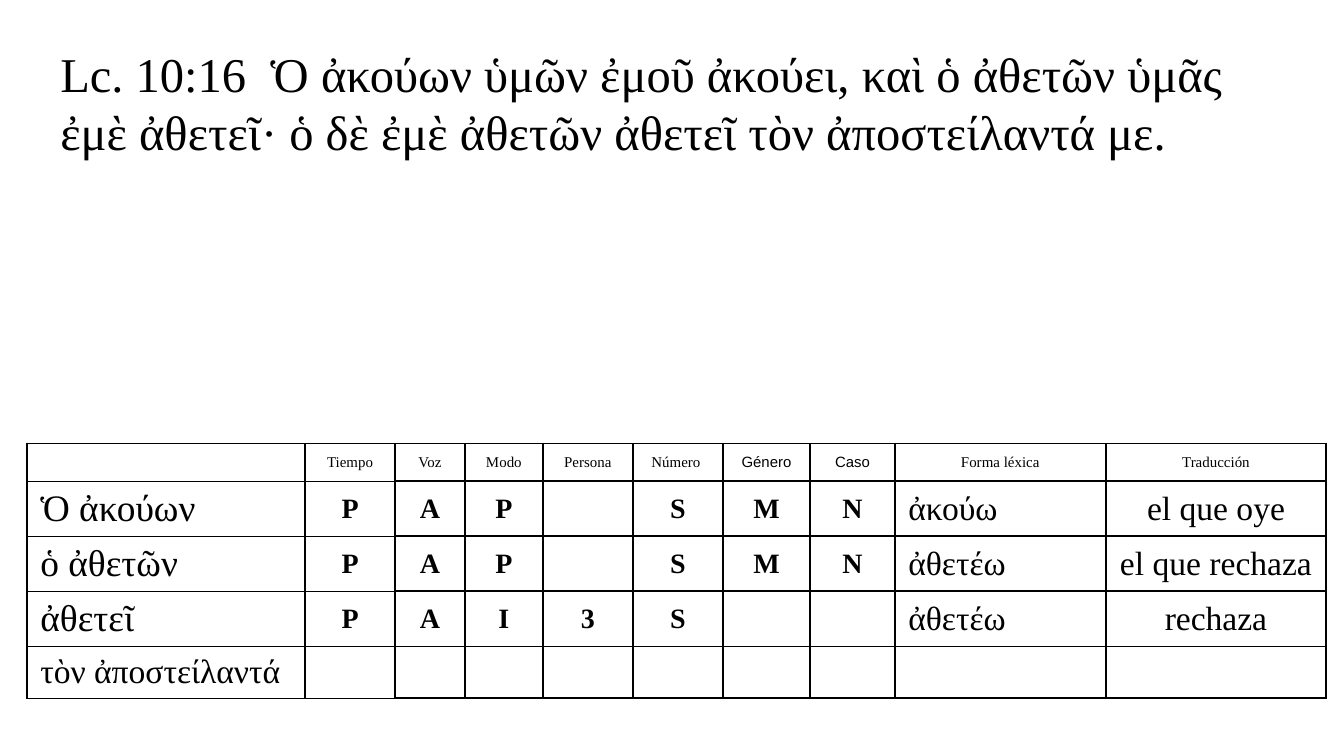
from lxml.etree import SubElement
from pptx import Presentation
from pptx.dml.color import RGBColor as RGB
from pptx.enum.text import MSO_ANCHOR as ANCHOR, MSO_AUTO_SIZE as AUTO, PP_ALIGN as ALIGN
from pptx.oxml import parse_xml
from pptx.oxml.ns import nsdecls, qn
from pptx.util import Inches, Pt

THEME = {
    "ink": "000000", "serif": "Times New Roman", "sans": "Arial",
    "verse": 26, "header": 8, "form": 20, "code": 15, "gloss": 18,
}
VERSE = ("Lc. 10:16  Ὁ ἀκούων ὑμῶν ἐμοῦ ἀκούει, καὶ ὁ ἀθετῶν ὑμᾶς "
         "ἐμὲ ἀθετεῖ· ὁ δὲ ἐμὲ ἀθετῶν ἀθετεῖ τὸν ἀποστείλαντά με.")
ROWS = [
    ["", "Tiempo", "Voz", "Modo", "Persona", "Número ", "Género", "Caso",
     "Forma léxica", "Traducción"],
    ["Ὁ ἀκούων", *"PAP", "", *"SMN", "ἀκούω", "el que oye"],
    ["ὁ ἀθετῶν", *"PAP", "", *"SMN", "ἀθετέω", "el que rechaza"],
    ["ἀθετεῖ", *"PAI3S", "", "", "ἀθετέω", "rechaza"],
    ["τὸν ἀποστείλαντά"] + [""] * 9,
]
COL_WIDTHS = [2.07, 0.67, 0.52, 0.58, 0.67, 0.67, 0.65, 0.63, 1.57, 1.64]
ROW_HEIGHTS = [0.28, 0.41, 0.41, 0.41, 0.37]
LAST_ROW = len(ROWS) - 1


def write(p, text, size, face="serif", bold=False):
    if not text:
        SubElement(p._p, qn("a:endParaRPr"), sz=str(size * 100))
        return
    r = p.add_run()
    r.text = text
    for name, value in {"size": Pt(size), "name": THEME[face], "bold": bold}.items():
        setattr(r.font, name, value)
    r.font.color.rgb = RGB.from_string(THEME["ink"])


def border(cell, widths):
    for i, (side, width) in enumerate(widths.items()):
        cell._tc.get_or_add_tcPr().insert(i, parse_xml(
            f'<a:ln{side} {nsdecls("a")} w="{Pt(width)}"><a:solidFill>'
            f'<a:srgbClr val="{THEME["ink"]}"/></a:solidFill></a:ln{side}>'))


prs = Presentation()
prs.slide_width, prs.slide_height = Inches(10), Inches(10 * 9 / 16)
s = prs.slides.add_slide(prs.slide_layouts[6])

table = s.shapes.add_table(
    len(ROWS), len(COL_WIDTHS), Inches(0.2), Inches(3.3),
    Inches(sum(COL_WIDTHS)), Inches(sum(ROW_HEIGHTS))).table
table.first_row = table.horz_banding = False
for column, width in zip(table.columns, COL_WIDTHS):
    column.width = Inches(width)
for row, height in zip(table.rows, ROW_HEIGHTS):
    row.height = Inches(height)

for i, texts in enumerate(ROWS):
    for j, text in enumerate(texts):
        cell = table.cell(i, j)
        cell.fill.background()
        cell.vertical_anchor = ANCHOR.MIDDLE
        cell.margin_top = cell.margin_bottom = Inches(0.04)
        thin = 0.75 if j < 2 else 1
        border(cell, {"L": 1, "R": 1, "T": thin if i else 1, "B": thin})

        p = cell.text_frame.paragraphs[0]
        p.alignment = ALIGN.LEFT if i and j in (0, 8) else ALIGN.CENTER
        if i == 0:
            write(p, text, THEME["header"], "sans" if j in (6, 7) else "serif")
        elif 1 <= j <= 7:
            write(p, text, THEME["code"], bold=True)
        else:
            write(p, text, THEME["form" if j == 0 and i < LAST_ROW else "gloss"])

verse = s.shapes.add_textbox(Inches(0.35), Inches(0.27), Inches(9.25), Inches(0.98))
tf = verse.text_frame
for name, value in {"word_wrap": True, "vertical_anchor": ANCHOR.MIDDLE,
                    "auto_size": AUTO.SHAPE_TO_FIT_TEXT}.items():
    setattr(tf, name, value)
write(tf.paragraphs[0], VERSE, THEME["verse"])

prs.save("out.pptx")
